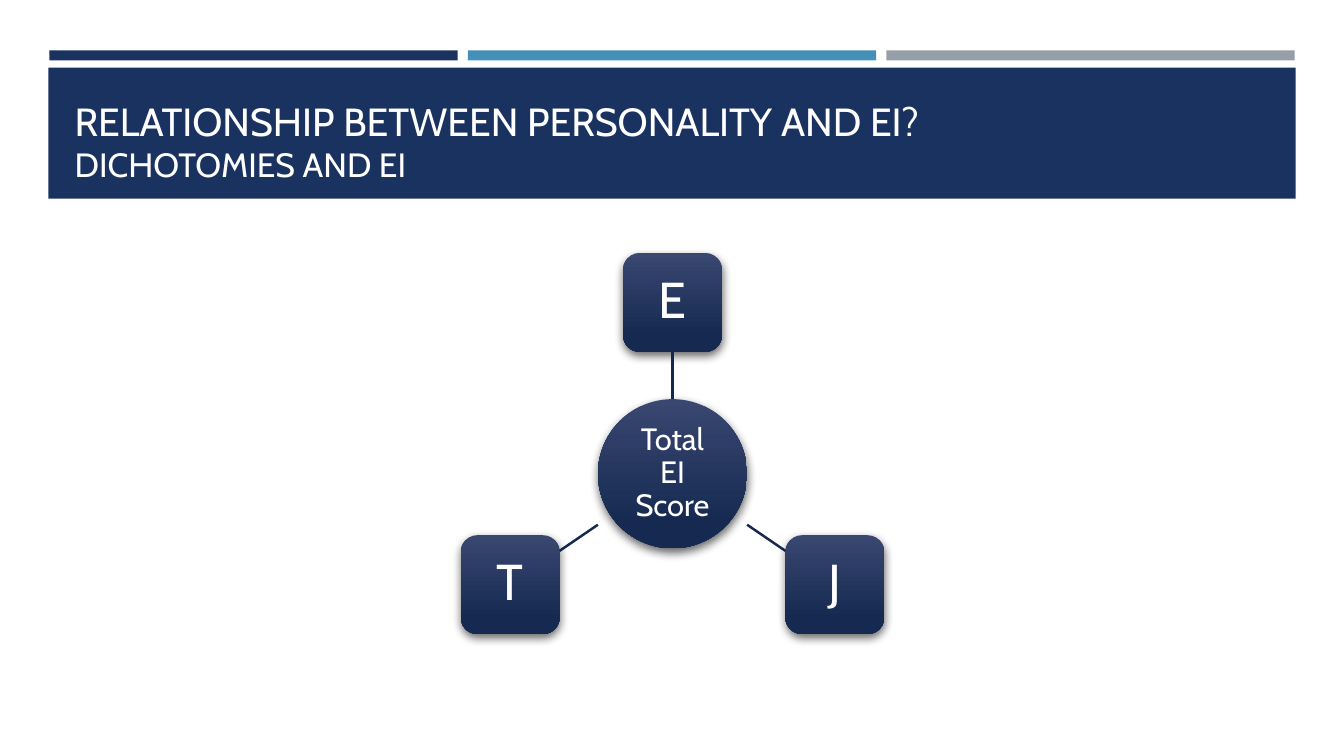
from pptx import Presentation
from pptx.dml.color import RGBColor
from pptx.enum.shapes import MSO_CONNECTOR, MSO_SHAPE
from pptx.enum.text import MSO_ANCHOR, MSO_AUTO_SIZE, PP_ALIGN
from pptx.oxml import parse_xml
from pptx.oxml.ns import nsdecls
from pptx.util import Inches, Pt

FONT = "Cabin"
NAVY, BLUE, GRAY, WHITE = "1A3260", "4590B8", "969FA7", "FFFFFF"
NODE_TOP, NODE_BOTTOM, LINK = "394771", "162A51", "15284D"


def color(hex_string):
    return RGBColor.from_string(hex_string)


def add_node(kind, center_x, center_y, size, text, font_size):
    """Add a shaded, shadowed diagram node centred on a point."""
    node = slide.shapes.add_shape(
        kind, Inches(center_x - size / 2), Inches(center_y - size / 2),
        Inches(size), Inches(size))
    node.line.fill.background()
    node.fill.gradient()
    node.fill.gradient_angle = 270
    for stop, position, shade in zip(
            node.fill.gradient_stops, (0, 0.84), (NODE_TOP, NODE_BOTTOM)):
        stop.position = position
        stop.color.rgb = color(shade)
    node.shadow.inherit = False
    effects = node._element.spPr.find("{*}effectLst")
    effects.append(parse_xml(
        f'<a:outerShdw {nsdecls("a")} blurRad="{Pt(7)}" dist="{Pt(3)}" '
        'dir="5040000" algn="ctr" rotWithShape="0"><a:srgbClr val="000000">'
        '<a:alpha val="60000"/></a:srgbClr></a:outerShdw>'))

    frame = node.text_frame
    frame.text = text
    frame.word_wrap = True
    frame.vertical_anchor = MSO_ANCHOR.MIDDLE
    paragraph = frame.paragraphs[0]
    paragraph.alignment = PP_ALIGN.CENTER
    paragraph.line_spacing = 0.9
    font = paragraph.runs[0].font
    font.name, font.size, font.color.rgb = FONT, Pt(font_size), color(WHITE)
    return node


presentation = Presentation()
presentation.slide_width = Inches(13.33)
presentation.slide_height = Inches(7.5)
slide = presentation.slides.add_slide(presentation.slide_layouts[5])

# Header: three thin bars above a wide band
BAR_WIDTH, BAR_STEP = 4.05, 4.15
bars = [(0.49 + i * BAR_STEP, 0.5, BAR_WIDTH, 0.1, fill)
        for i, fill in enumerate((NAVY, BLUE, GRAY))]
for left, top, width, height, fill in bars + [(0.48, 0.67, 12.37, 1.3, NAVY)]:
    bar = slide.shapes.add_shape(
        MSO_SHAPE.RECTANGLE, Inches(left), Inches(top), Inches(width), Inches(height))
    bar.fill.solid()
    bar.fill.fore_color.rgb = color(fill)
    bar.line.fill.background()
    bar.shadow.inherit = False

# Title, brought in front of the band
title = slide.shapes.title
slide.shapes._spTree.append(title._element)
title.left, title.top = Inches(0.64), Inches(0.77)
title.width, title.height = Inches(12.06), Inches(1.11)
frame = title.text_frame
frame.text = "RELATIONSHIP BETWEEN PERSONALITY AND EI?\vDICHOTOMIES AND EI"
frame.auto_size = MSO_AUTO_SIZE.NONE
frame.word_wrap = True
frame.vertical_anchor = MSO_ANCHOR.BOTTOM
frame.paragraphs[0].alignment = PP_ALIGN.LEFT
for run, size in zip(frame.paragraphs[0].runs, (28, 24)):
    run.font.name, run.font.size, run.font.color.rgb = FONT, Pt(size), color(WHITE)

# Hub with three satellites, given by their offsets from the hub
HUB_X, HUB_Y, HUB_SIZE, NODE_SIZE = 6.67, 4.7, 1.48, 0.98
hub = add_node(MSO_SHAPE.OVAL, HUB_X, HUB_Y, HUB_SIZE, "Total EI Score", 22)
for letter, dx, dy in (("E", 0, -1.7), ("J", 1.61, 1.1), ("T", -1.61, 1.1)):
    node = add_node(MSO_SHAPE.ROUNDED_RECTANGLE, HUB_X + dx, HUB_Y + dy,
                    NODE_SIZE, letter, 36)
    # The link spans the gap between the two bounding squares
    reach = max(abs(dx), abs(dy))
    start, end = HUB_SIZE / 2 / reach, 1 - NODE_SIZE / 2 / reach
    link = slide.shapes.add_connector(
        MSO_CONNECTOR.STRAIGHT,
        Inches(HUB_X + dx * start), Inches(HUB_Y + dy * start),
        Inches(HUB_X + dx * end), Inches(HUB_Y + dy * end))
    link.line.color.rgb = color(LINK)
    link.line.width = Pt(1.75)
    link._element.spPr.append(parse_xml(f'<a:effectLst {nsdecls("a")}/>'))
    if dx == 0:
        link.begin_connect(hub, 0)
        link.end_connect(node, 2)

presentation.save("out.pptx")
